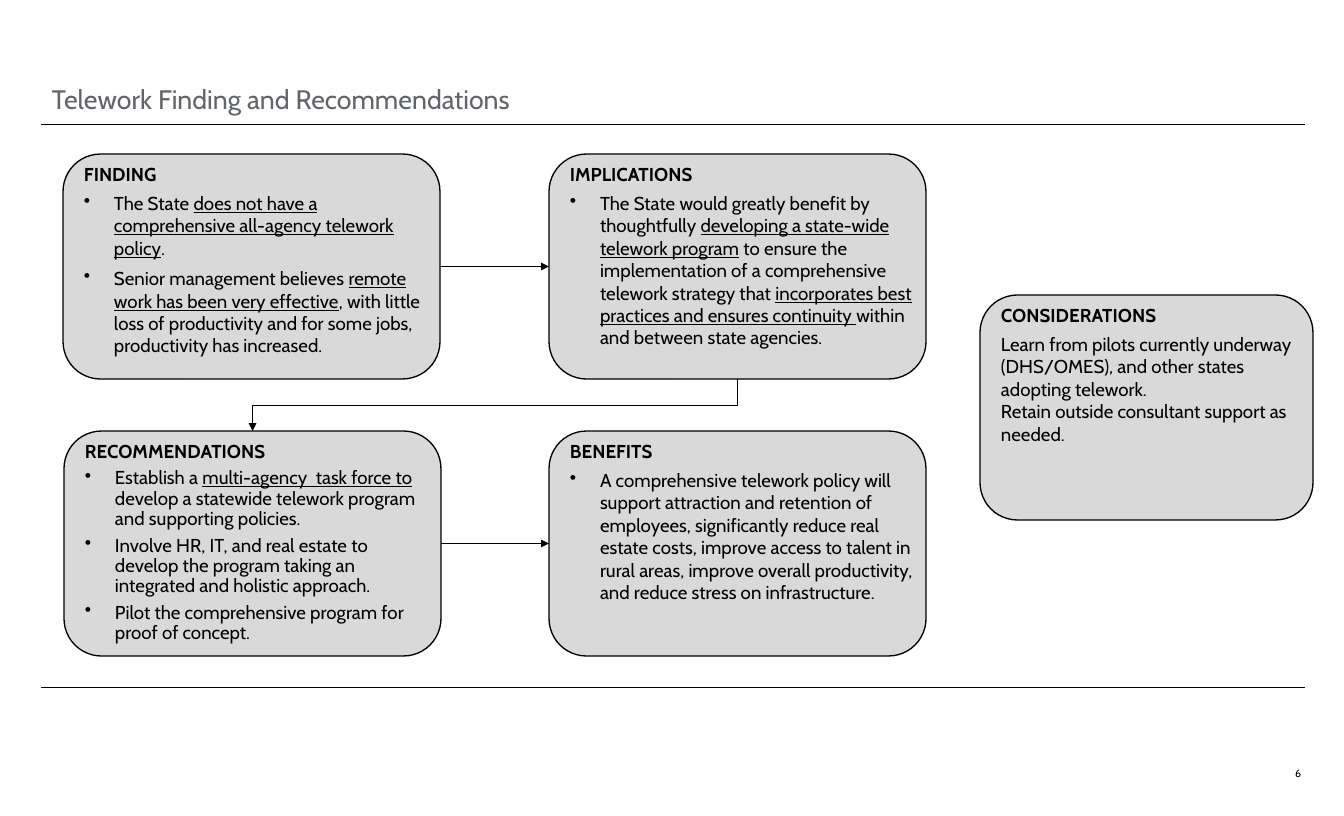
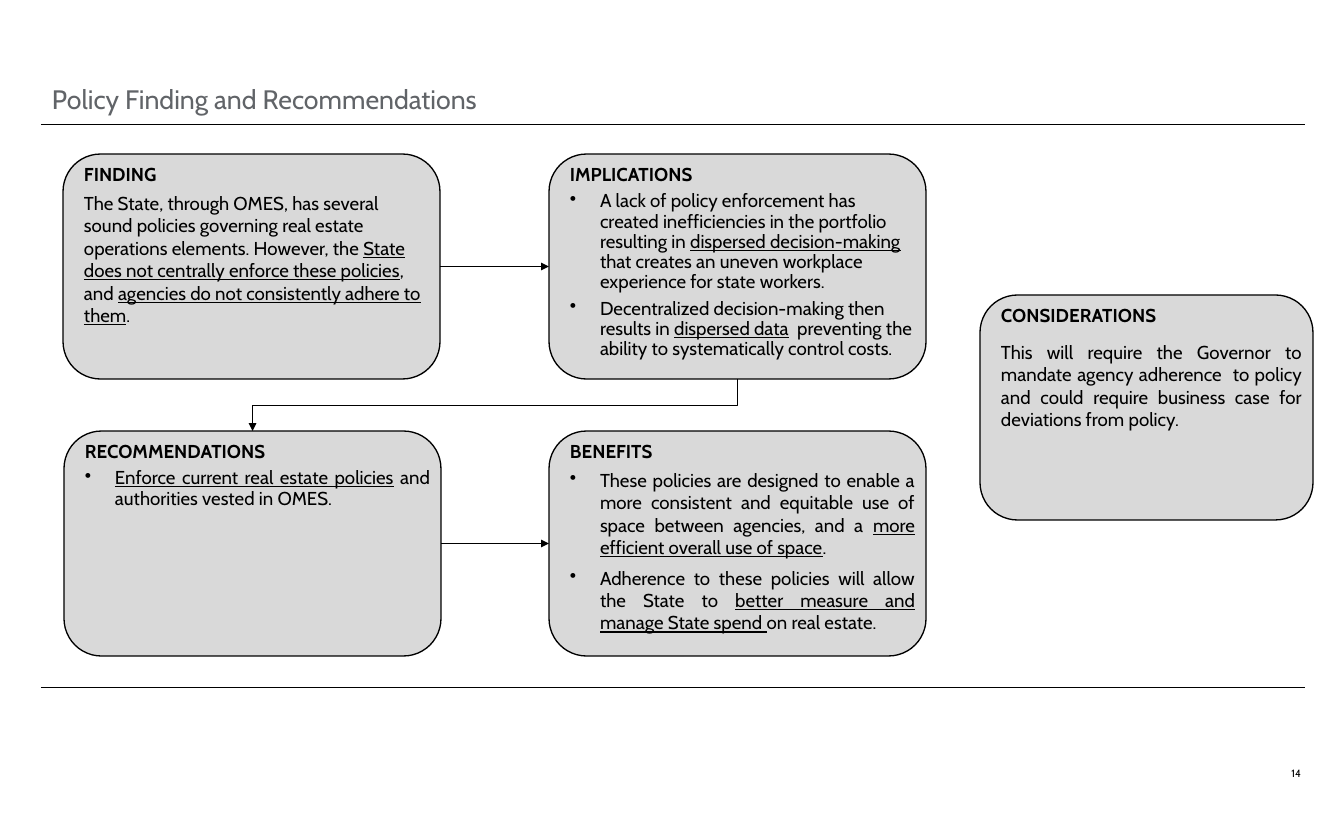
"""Build two finding-and-recommendation flow slides."""
from dataclasses import dataclass

from lxml import etree
from pptx import Presentation
from pptx.dml.color import RGBColor
from pptx.enum.shapes import MSO_CONNECTOR, MSO_SHAPE
from pptx.enum.text import MSO_ANCHOR, PP_ALIGN
from pptx.oxml.ns import qn
from pptx.util import Pt

STRAIGHT = MSO_CONNECTOR.STRAIGHT
BENT = MSO_CONNECTOR.ELBOW
ROUNDED = MSO_SHAPE.ROUNDED_RECTANGLE
TOP, MIDDLE = MSO_ANCHOR.TOP, MSO_ANCHOR.MIDDLE
LEFT, RIGHT, JUSTIFY = PP_ALIGN.LEFT, PP_ALIGN.RIGHT, PP_ALIGN.JUSTIFY
LEFT_SIDE, RIGHT_SIDE = 1, 3

PX = 9525
FONT = "Cabin"
BLACK, GREY, CARD_FILL = "000000", "616468", "D9D9D9"
HEADING_GAP, BULLET_GAP, BULLET_INDENT = 5, 6, 30
RULE_LEFT, RULE_RIGHT, RULE_TOPS = 41, 1305, (124, 687)
CARD_WIDTH, CARD_HEIGHT = 377, 225

CARD_PLACES = {
    "FINDING": (63, 154, CARD_WIDTH),
    "IMPLICATIONS": (549, 154, CARD_WIDTH),
    "RECOMMENDATIONS": (64, 431, CARD_WIDTH),
    "BENEFITS": (549, 431, CARD_WIDTH),
    "CONSIDERATIONS": (980, 295, 333),
}
ARROWS = [("FINDING", "IMPLICATIONS"), ("RECOMMENDATIONS", "BENEFITS")]
ELBOW = ("IMPLICATIONS", "RECOMMENDATIONS")


@dataclass
class Card:
    """Body of one card; underscores enclose underlined words."""
    lines: list
    bullets: bool = True
    align: int = LEFT
    tight: bool = False
    lead: int = 0


SLIDES = [
    ("Telework Finding and Recommendations", "6", {
        "FINDING": Card([
            "The State _does not have a comprehensive all-agency telework policy_.",
            "Senior management believes _remote work has been very effective_, with little "
            "loss of productivity and for some jobs, productivity has increased.",
        ]),
        "IMPLICATIONS": Card([
            "The State would greatly benefit by thoughtfully _developing a state-wide "
            "telework program_ to ensure the implementation of a comprehensive telework "
            "strategy that _incorporates best practices and ensures continuity _within "
            "and between state agencies.",
        ]),
        "RECOMMENDATIONS": Card([
            "Establish a _multi-agency  task force to _develop a statewide telework "
            "program and supporting policies.",
            "Involve HR, IT, and real estate to develop the program taking an integrated "
            "and holistic approach.",
            "Pilot the comprehensive program for proof of concept.",
        ], tight=True),
        "BENEFITS": Card([
            "A comprehensive telework policy will support attraction and retention of "
            "employees, significantly reduce real estate costs, improve access to talent "
            "in rural areas, improve overall productivity, and reduce stress on "
            "infrastructure.",
        ]),
        "CONSIDERATIONS": Card([
            "Learn from pilots currently underway (DHS/OMES), and other states adopting "
            "telework.",
            "Retain outside consultant support as needed.",
        ], bullets=False),
    }),
    ("Policy Finding and Recommendations", "14", {
        "FINDING": Card([
            "The State, through OMES, has several sound policies governing real estate "
            "operations elements. However, the _State does not centrally enforce these "
            "policies_, and _agencies do not consistently adhere to them_.",
        ], bullets=False),
        "IMPLICATIONS": Card([
            "A lack of policy enforcement has created inefficiencies in the portfolio "
            "resulting in _dispersed decision-making _that creates an uneven workplace "
            "experience for state workers.",
            "Decentralized decision-making then results in _dispersed data_  preventing "
            "the ability to systematically control costs.",
        ], tight=True),
        "RECOMMENDATIONS": Card([
            "_Enforce current real estate policies_ and authorities vested in OMES.",
        ], align=JUSTIFY, tight=True),
        "BENEFITS": Card([
            "These policies are designed to enable a more consistent and equitable use of "
            "space between agencies, and a _more efficient overall use of space_.",
            "Adherence to these policies will allow the State to _better measure and "
            "manage State spend _on real estate.",
        ], align=JUSTIFY),
        "CONSIDERATIONS": Card([
            "This will require the Governor to mandate agency adherence  to policy and "
            "could require business case for deviations from policy.",
        ], bullets=False, align=JUSTIFY, lead=6),
    }),
]


def color(value):
    return RGBColor.from_string(value)


def add_span(para, text, size, shade=BLACK, bold=False, underline=False):
    span = para.add_run()
    span.text = text
    span.font.name = FONT
    span.font.size = Pt(size)
    span.font.bold = bold
    span.font.underline = underline
    span.font.color.rgb = color(shade)


def set_frame(frame, margins, anchor):
    frame.word_wrap = True
    frame.vertical_anchor = anchor
    frame.margin_left, frame.margin_top, frame.margin_right, frame.margin_bottom = (
        margin * PX for margin in margins)


def add_label(page, place, text, size, shade, margins, anchor, align):
    box = page.shapes.add_textbox(*(length * PX for length in place))
    set_frame(box.text_frame, margins, anchor)
    para = box.text_frame.paragraphs[0]
    para.alignment = align
    add_span(para, text, size, shade)
    return para


def add_line(page, start, end, arrow=False, kind=STRAIGHT):
    line = page.shapes.add_connector(kind, *(int(length * PX) for length in (*start, *end)))
    line.line.color.rgb = color(BLACK)
    line.line.width = Pt(0.5)
    properties = line._element.spPr
    if arrow:
        etree.SubElement(properties.find(qn("a:ln")), qn("a:tailEnd"), type="triangle")
    etree.SubElement(properties, qn("a:effectLst"))
    return line


def add_bullet(para):
    properties = para._p.get_or_add_pPr()
    properties.set("marL", str(BULLET_INDENT * PX))
    properties.set("indent", str(-BULLET_INDENT * PX))
    etree.SubElement(properties, qn("a:buChar"), char="•")


def add_card(page, heading, card):
    left, top, width = CARD_PLACES[heading]
    box = page.shapes.add_shape(ROUNDED, left * PX, top * PX, width * PX, CARD_HEIGHT * PX)
    box.shadow.inherit = False
    box.fill.solid()
    box.fill.fore_color.rgb = color(CARD_FILL)
    box.line.color.rgb = color(BLACK)
    box.line.width = Pt(1)
    frame = box.text_frame
    set_frame(frame, (10, 0, 0, 0), TOP)

    title = frame.paragraphs[0]
    title.alignment = LEFT
    title.line_spacing = 0.9
    title.space_after = Pt(HEADING_GAP)
    add_span(title, heading, 14, bold=True)

    for number, line in enumerate(card.lines):
        para = frame.add_paragraph()
        if card.bullets:
            add_bullet(para)
        para.alignment = card.align
        if card.tight:
            para.line_spacing = 0.9
            para.space_after = Pt(HEADING_GAP)
        elif number and card.bullets:
            para.space_before = Pt(BULLET_GAP)
        elif card.lead:
            para.space_before = Pt(card.lead)
        for part, text in enumerate(line.split("_")):
            if text:
                add_span(para, text, 14, underline=part % 2 == 1)
    return box


def add_elbow(page, source, target):
    source_left, source_top, source_width = CARD_PLACES[source]
    target_left, target_top, target_width = CARD_PLACES[target]
    start_x, start_y = source_left + source_width / 2, source_top + CARD_HEIGHT
    end_x, end_y = target_left + target_width / 2, target_top
    center_x, center_y = (start_x + end_x) / 2, (start_y + end_y) / 2
    half_drop, half_run = (end_y - start_y) / 2, (start_x - end_x) / 2
    elbow = add_line(page, (center_x - half_drop, center_y - half_run),
                     (center_x + half_drop, center_y + half_run), True, BENT)
    elbow._element.spPr.find(qn("a:xfrm")).set("rot", str(90 * 60000))


def add_page(deck, title, page_number, cards):
    page = deck.slides.add_slide(deck.slide_layouts[6])
    for top in RULE_TOPS:
        add_line(page, (RULE_LEFT, top), (RULE_RIGHT, top))
    heading = add_label(page, (42, 81, 673, 39), title, 20, GREY, (10, 5, 10, 5), MIDDLE, LEFT)
    heading.line_spacing = 0.95
    add_label(page, (1116, 767, 185, 20), page_number, 7.9, BLACK, (0, 0, 0, 0), TOP, RIGHT)

    boxes = {name: add_card(page, name, card) for name, card in cards.items()}
    for source, target in ARROWS:
        arrow = add_line(page, (0, 0), (1, 1), True)
        arrow.begin_connect(boxes[source], RIGHT_SIDE)
        arrow.end_connect(boxes[target], LEFT_SIDE)
    add_elbow(page, *ELBOW)


def main():
    deck = Presentation()
    deck.slide_width, deck.slide_height = 1344 * PX, 816 * PX
    for title, page_number, cards in SLIDES:
        add_page(deck, title, page_number, cards)
    deck.save("out.pptx")


if __name__ == "__main__":
    main()
